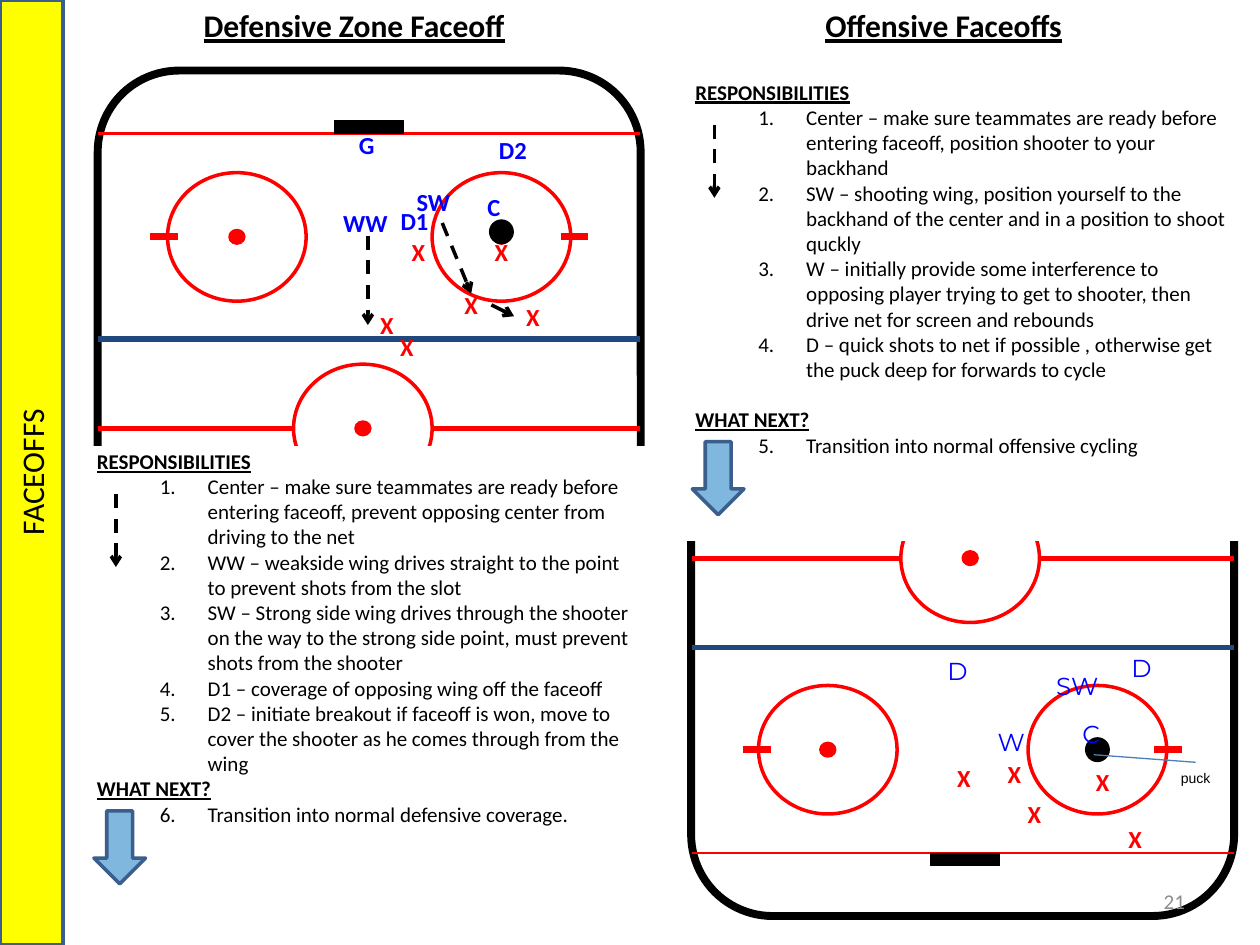
from lxml.etree import SubElement
from pptx import Presentation
from pptx.dml.color import RGBColor
from pptx.enum.dml import MSO_LINE
from pptx.enum.shapes import MSO_CONNECTOR, MSO_SHAPE as KIND
from pptx.enum.text import MSO_ANCHOR, MSO_AUTO_SIZE, PP_ALIGN
from pptx.oxml.ns import qn
from pptx.util import Inches, Pt

rgb = RGBColor.from_string
RED, BLUE, BLACK, WHITE, EDGE = "FF0000", "0000FF", "000000", "FFFFFF", "3A5F8C"

prs = Presentation()
prs.slide_width, prs.slide_height = Inches(10), Inches(7.5)
slide = prs.slides.add_slide(prs.slide_layouts[6])
# The slide is a grid of 100 columns by 75 rows, so the cells are square
COL, ROW = prs.slide_width / 100, prs.slide_height / 75


def place(parent, kind, x, y, w, h, fill, line, weight):
    """Add a preset shape centred on column x, row y."""
    shape = parent.add_shape(kind, round((x - w / 2) * COL), round((y - h / 2) * ROW),
                             round(w * COL), round(h * ROW))
    shape.shadow.inherit = False
    if fill:
        shape.fill.solid()
        shape.fill.fore_color.rgb = rgb(fill)
    else:
        shape.fill.background()
    shape.line.color.rgb = rgb(line)
    shape.line.width = Pt(weight)
    return shape


def stroke(parent, x1, y1, x2, y2, color, weight, arrow=False):
    """Add a line; a skating path is dashed and ends in an arrowhead."""
    line = parent.add_connector(MSO_CONNECTOR.STRAIGHT, round(x1 * COL), round(y1 * ROW),
                                round(x2 * COL), round(y2 * ROW))
    line.line.color.rgb = rgb(color)
    line.line.width = Pt(weight)
    if arrow:
        line.line.dash_style = MSO_LINE.DASH
        SubElement(line.line._get_or_add_ln(), qn("a:tailEnd"), type="arrow")
    SubElement(line._element.spPr, qn("a:effectLst"))


# Rinks: the offensive one is the defensive one upside down
# (middle column, middle row, side, faceoff spots, centre spot, goal, puck)
rinks = [
    (29.3, 27.5, 1, (18.8, 39.8), 28.8, 29.3, (39.8, 18.4)),
    (76.4, 50.8, -1, (65.7, 87.1), 77, 76.6, (87.1, 59.5)),
]
for mid_x, mid_y, side, spots, centre, goal, puck in rinks:
    rink = slide.shapes.add_group_shape().shapes
    boards = place(rink, KIND.ROUNDED_RECTANGLE, mid_x, mid_y, 43.1, 43.8, None, BLACK, 4.5)
    boards.adjustments[0] = 0.15
    spot_y, centre_y = mid_y - 8.7 * side, mid_y + 6.5 * side

    for x in spots:
        place(rink, KIND.OVAL, x, spot_y, 11, 10.2, WHITE, RED, 2)
        place(rink, KIND.OVAL, x, spot_y, 1.1, 1, RED, RED, 2)
    for way in (-1, 1):
        stroke(rink, mid_x + 15.2 * way, spot_y, mid_x + 17.4 * way, spot_y, RED, 4)
    for offset, color, weight in ((-0.6, "1F497D", 3), (6.5, RED, 3), (-16.9, RED, 1.5)):
        y = mid_y + offset * side
        stroke(rink, mid_x - 21.5, y, mid_x + 21.5, y, color, weight)

    place(rink, KIND.RECTANGLE, goal, mid_y - 17.4 * side, 5.5, 1, BLACK, BLACK, 0.5)
    place(rink, KIND.OVAL, *puck, 1.7, 1.7, BLACK, BLACK, 2)
    place(rink, KIND.OVAL, centre, centre_y, 11, 10.2, WHITE, RED, 2)
    place(rink, KIND.OVAL, centre, centre_y, 1.1, 1, RED, RED, 2)
    # Cut the rink off just past the centre line
    place(rink, KIND.RECTANGLE, mid_x, mid_y + 15.9 * side, 45, 15.8, WHITE, WHITE, 2)

stroke(slide.shapes, 94.9, 60.5, 86.8, 59.9, "4B7EBC", 0.75)

# Sidebar
sidebar = place(slide.shapes, KIND.RECTANGLE, 2.5, 37.5, 5, 75, "FFFF00", EDGE, 2)
sidebar.text_frame._txBody.bodyPr.set("vert", "vert270")
sidebar.text_frame.vertical_anchor = MSO_ANCHOR.MIDDLE
topic = sidebar.text_frame.paragraphs[0]
topic.text, topic.alignment = "FACEOFFS", PP_ALIGN.CENTER
topic.font.name, topic.font.size, topic.font.color.rgb = "Calibri", Pt(18), rgb(BLACK)

# Responsibilities: left column, top row, row of the block arrow, gap, duties, next step
plans = [
    (6.7, 35.1, 67.25, 0, [
        "Center – make sure teammates are ready before entering faceoff, "
        "prevent opposing center from driving to the net",
        "WW – weakside wing drives straight to the point to prevent shots from the slot",
        "SW – Strong side wing drives through the shooter on the way to the strong side "
        "point, must prevent shots from the shooter",
        "D1 – coverage of opposing wing off the faceoff",
        "D2 – initiate breakout if faceoff is won, move to cover the shooter as he comes "
        "through from the wing",
    ], "Transition into normal defensive coverage."),
    (54.2, 5.8, 37.95, 14.4, [
        "Center – make sure teammates are ready before entering faceoff, "
        "position shooter to your backhand",
        "SW – shooting wing, position yourself to the backhand of the center and in a "
        "position to shoot quckly",
        "W – initially provide some interference to opposing player trying to get to "
        "shooter, then drive net for screen and rebounds",
        "D – quick shots to net if possible , otherwise get the puck deep for forwards "
        "to cycle",
    ], "Transition into normal offensive cycling"),
]
for left, top, next_y, gap, duties, next_step in plans:
    next_arrow = place(slide.shapes, KIND.DOWN_ARROW, left + 2.8, next_y, 4.1, 5.8,
                       "0070C0", EDGE, 2)
    tint = next_arrow._element.spPr.find(qn("a:solidFill"))[0]
    SubElement(tint, qn("a:alpha"), val="50000")
    stroke(slide.shapes, left + 2.5, top + 4.1, left + 2.5, top + 9.9, BLACK, 2, arrow=True)

    plan = slide.shapes.add_textbox(round(left * COL), round(top * ROW),
                                    round(44.2 * COL), round(31.3 * ROW)).text_frame
    plan.word_wrap = True
    plan.text = "\n".join(["RESPONSIBILITIES", *duties, "WHAT NEXT?", next_step])
    number = 0
    for entry in plan.paragraphs:
        entry.font.name, entry.font.size = "Calibri", Pt(12)
        entry.font.color.rgb = rgb(BLACK)
        heading = entry.text in ("RESPONSIBILITIES", "WHAT NEXT?")
        entry.font.bold = entry.font.underline = heading
        if heading:
            entry.space_before = Pt(gap if number else 0)
            continue
        number += 1
        entry.level = 1
        props = entry._p.get_or_add_pPr()
        props.set("marL", str(Inches(0.88)))
        props.set("indent", str(Inches(-0.38)))
        numbering = SubElement(props, qn("a:buAutoNum"), type="arabicPeriod")
        if entry.text == next_step:
            numbering.set("startAt", str(number))
        props.append(props.find(qn("a:defRPr")))  # must follow the numbering

# Skating paths of the two wings
for route in ((29.2, 18.7, 29.2, 25.8), (35.1, 17.7, 37.4, 23.3), (39, 24.2, 40.8, 25.1)):
    stroke(slide.shapes, *route, BLACK, 2, arrow=True)

# Single-line labels by style:
# font, size, columns per letter, colour, bold, underline, (text, column, row)
opponents = [(30.7, 25.8), (42.3, 25.1), (33.2, 20), (39.8, 20), (37.4, 24.2), (32.3, 27.5),
             (80.5, 61.4), (87.5, 62), (90.1, 66.6), (76.5, 61.7), (82.1, 64.6)]
labels = [
    ("Calibri", 18, 1.2, BLACK, True, True,
     [("Defensive Zone Faceoff", 28.1, 2), ("Offensive Faceoffs", 74.9, 2)]),
    ("Calibri", 14, 1.8, BLUE, True, False,
     [("G", 29.1, 11.5), ("D2", 40.7, 11.9), ("D1", 32.9, 17.5),
      ("C", 39.2, 16.4), ("WW", 29, 17.7), ("SW", 34.4, 16)]),
    ("Montserrat", 14, 2, BLUE, False, False,
     [("D", 90.6, 53), ("D", 76, 53.2), ("W", 80.2, 58.9),
      ("C", 86.6, 58.2), ("SW", 85.5, 54.4)]),
    ("Calibri", 14, 1.2, RED, True, False, [("X", x, y) for x, y in opponents]),
    ("Arial", 8, 0.7, BLACK, False, False, [("puck", 94.9, 61.7)]),
    ("Calibri", 12, 1, "8C8C8C", False, False, [("21", 93.2, 71.5)]),
]
for font, size, letter, color, bold, underline, words in labels:
    for word, x, y in words:
        w, h = 2 + len(word) * letter, 1 + size / 6
        label = slide.shapes.add_textbox(round((x - w / 2) * COL), round((y - h / 2) * ROW),
                                         round(w * COL), round(h * ROW)).text_frame
        label.word_wrap = False
        label.auto_size = MSO_AUTO_SIZE.SHAPE_TO_FIT_TEXT
        label.vertical_anchor = MSO_ANCHOR.MIDDLE
        line = label.paragraphs[0]
        line.text, line.alignment = word, PP_ALIGN.CENTER
        line.font.name, line.font.size, line.font.color.rgb = font, Pt(size), rgb(color)
        line.font.bold, line.font.underline = bold, underline

prs.save("out.pptx")
